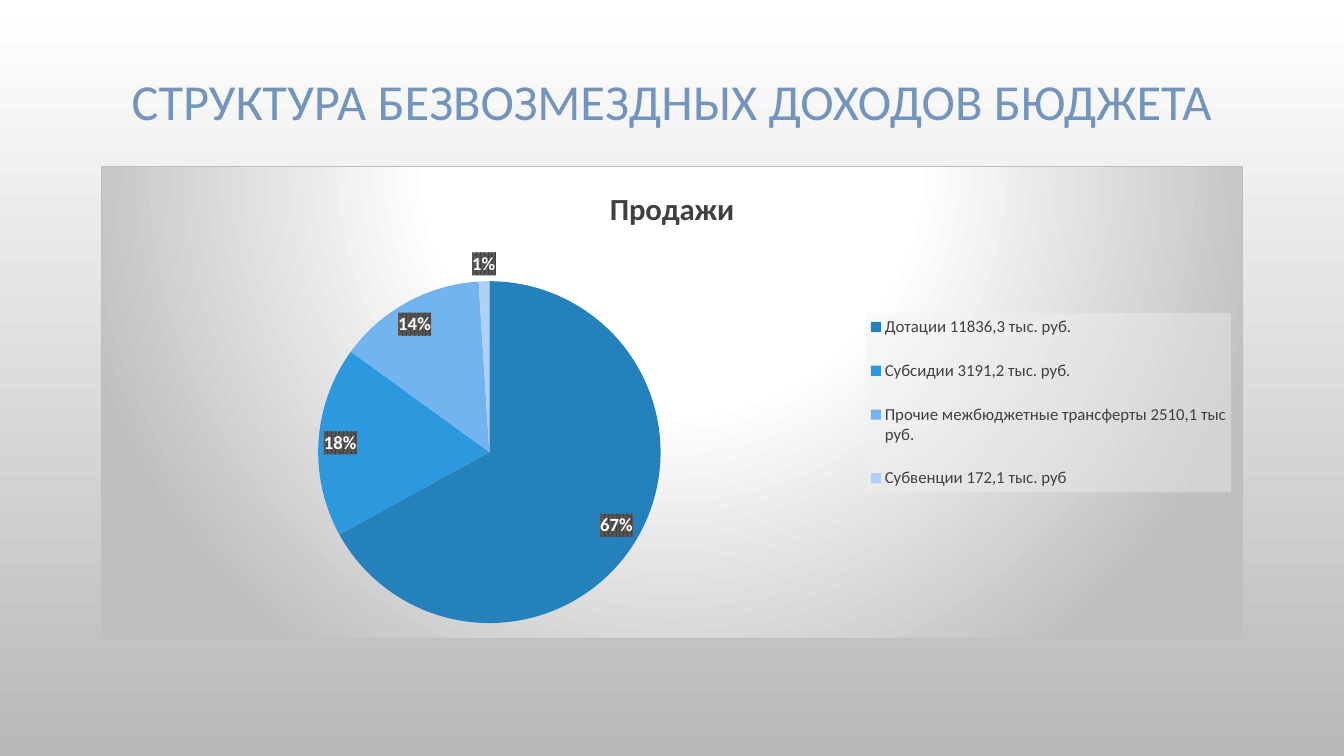
"""Build a slide with a pie chart of grant income in the budget."""
from lxml.etree import fromstring
from pptx import Presentation
from pptx.chart.data import CategoryChartData
from pptx.dml.color import RGBColor
from pptx.enum.chart import XL_CHART_TYPE, XL_LABEL_POSITION, XL_LEGEND_POSITION
from pptx.enum.text import MSO_ANCHOR, PP_ALIGN
from pptx.oxml.ns import nsdecls, qn
from pptx.util import Inches, Pt

TITLE = "СТРУКТУРА БЕЗВОЗМЕЗДНЫХ ДОХОДОВ БЮДЖЕТА"
SERIES = "Продажи"
SLICES = [
    ("Дотации 11836,3 тыс. руб.\n", 67, "2581BC"),
    ("Субсидии 3191,2 тыс. руб.\n", 18, "2C99DF"),
    ("Прочие межбюджетные трансферты 2510,1 тыс руб.\n", 14, "72B4F0"),
    ("Субвенции 172,1 тыс. руб", 1, "B1D0F5"),
]
BACKGROUND = ["FFFFFF", "B9B9B9"]
CHART_STOPS = [(0, "FFFFFF"), (39, "FFFFFF"), (100, "BFBFBF")]
PIE_BOX = (0.19, 0.24, 0.3, 0.73)
LEGEND_BOX = (0.67, 0.31, 0.32, 0.38)


def rgb(value):
    return RGBColor.from_string(value)


def style(font, size, color, bold=False):
    font.name, font.size, font.bold = "Calibri", Pt(size), bold
    font.color.rgb = rgb(color)


def srgb(value, inner=""):
    return f'<a:srgbClr val="{value}">{inner}</a:srgbClr>'


def sp_pr(content):
    return fromstring(f'<c:spPr {nsdecls("c", "a")}>{content}</c:spPr>')


def layout(box, target=""):
    modes = '<c:xMode val="edge"/><c:yMode val="edge"/>'
    sizes = "".join(f'<c:{k} val="{v}"/>' for k, v in zip("xywh", box))
    return fromstring(f'<c:layout {nsdecls("c")}><c:manualLayout>{target}{modes}{sizes}'
                      '</c:manualLayout></c:layout>')


def add_title(slide):
    sp = slide.shapes.title
    sp.left, sp.top, sp.width, sp.height = map(Inches, (1, 0.68, 11.33, 1.31))
    tf = sp.text_frame
    tf.text = TITLE
    tf.word_wrap = True
    tf.vertical_anchor = MSO_ANCHOR.MIDDLE
    tf.margin_bottom = Inches(0.65)
    p = tf.paragraphs[0]
    p.alignment, p.line_spacing = PP_ALIGN.CENTER, 0.9
    style(p.font, 36, "7294BD")


def add_pie(slide):
    data = CategoryChartData()
    data.categories = [name for name, _, _ in SLICES]
    data.add_series(SERIES, [value for _, value, _ in SLICES])
    box = map(Inches, (1, 1.65, 11.33, 4.69))
    chart = slide.shapes.add_chart(XL_CHART_TYPE.PIE, *box, data).chart
    style(chart.font, 10, "000000")

    chart.has_title = True
    tf = chart.chart_title.text_frame
    tf.text = SERIES
    style(tf.paragraphs[0].font, 22, "404040", True)
    chart.chart_title.include_in_layout = False

    plot = chart.plots[0]
    plot.vary_by_categories = True
    for i, (_, _, color) in enumerate(SLICES):
        fill = plot.series[0].points[i].format.fill
        fill.solid()
        fill.fore_color.rgb = rgb(color)

    labels = plot.series[0].data_labels
    style(labels.font, 13.3, "FFFFFF", True)
    labels.show_percentage, labels.show_value = True, False
    labels.position = XL_LABEL_POSITION.BEST_FIT
    labels._element.find(qn("c:txPr")).addprevious(sp_pr(
        f'<a:pattFill prst="pct75"><a:fgClr>{srgb("404040")}</a:fgClr>'
        f'<a:bgClr>{srgb("595959")}</a:bgClr></a:pattFill>'))

    chart.has_legend = True
    legend = chart.legend
    legend.position = XL_LEGEND_POSITION.RIGHT
    legend.include_in_layout = False
    style(legend.font, 12, "404040")
    overlay = legend._element.find(qn("c:overlay"))
    alpha = '<a:alpha val="39000"/>'
    overlay.addnext(sp_pr(f'<a:solidFill>{srgb("F2F2F2", alpha)}</a:solidFill>'))

    space = chart._chartSpace
    plot_area = space.find(".//" + qn("c:plotArea"))
    for parent in (plot_area, legend._element):
        for old in parent.findall(qn("c:layout")):
            parent.remove(old)
    plot_area.insert(0, layout(PIE_BOX, '<c:layoutTarget val="inner"/>'))
    overlay.addprevious(layout(LEGEND_BOX))

    stops = "".join(f'<a:gs pos="{pos * 1000}">{srgb(color)}</a:gs>' for pos, color in CHART_STOPS)
    space.find(qn("c:chart")).addnext(sp_pr(
        f'<a:gradFill><a:gsLst>{stops}</a:gsLst><a:path path="circle">'
        '<a:fillToRect l="50000" t="-80000" r="50000" b="180000"/></a:path></a:gradFill>'
        f'<a:ln w="9525"><a:solidFill>{srgb("BFBFBF")}</a:solidFill></a:ln>'))


def main():
    prs = Presentation()
    prs.slide_width, prs.slide_height = Inches(13.33), Inches(7.5)
    slide = prs.slides.add_slide(prs.slide_layouts[5])
    fill = slide.background.fill
    fill.gradient()
    fill.gradient_angle = 270
    for stop, color in zip(fill.gradient_stops, BACKGROUND):
        stop.color.rgb = rgb(color)
    add_title(slide)
    add_pie(slide)
    prs.save("out.pptx")


if __name__ == "__main__":
    main()
